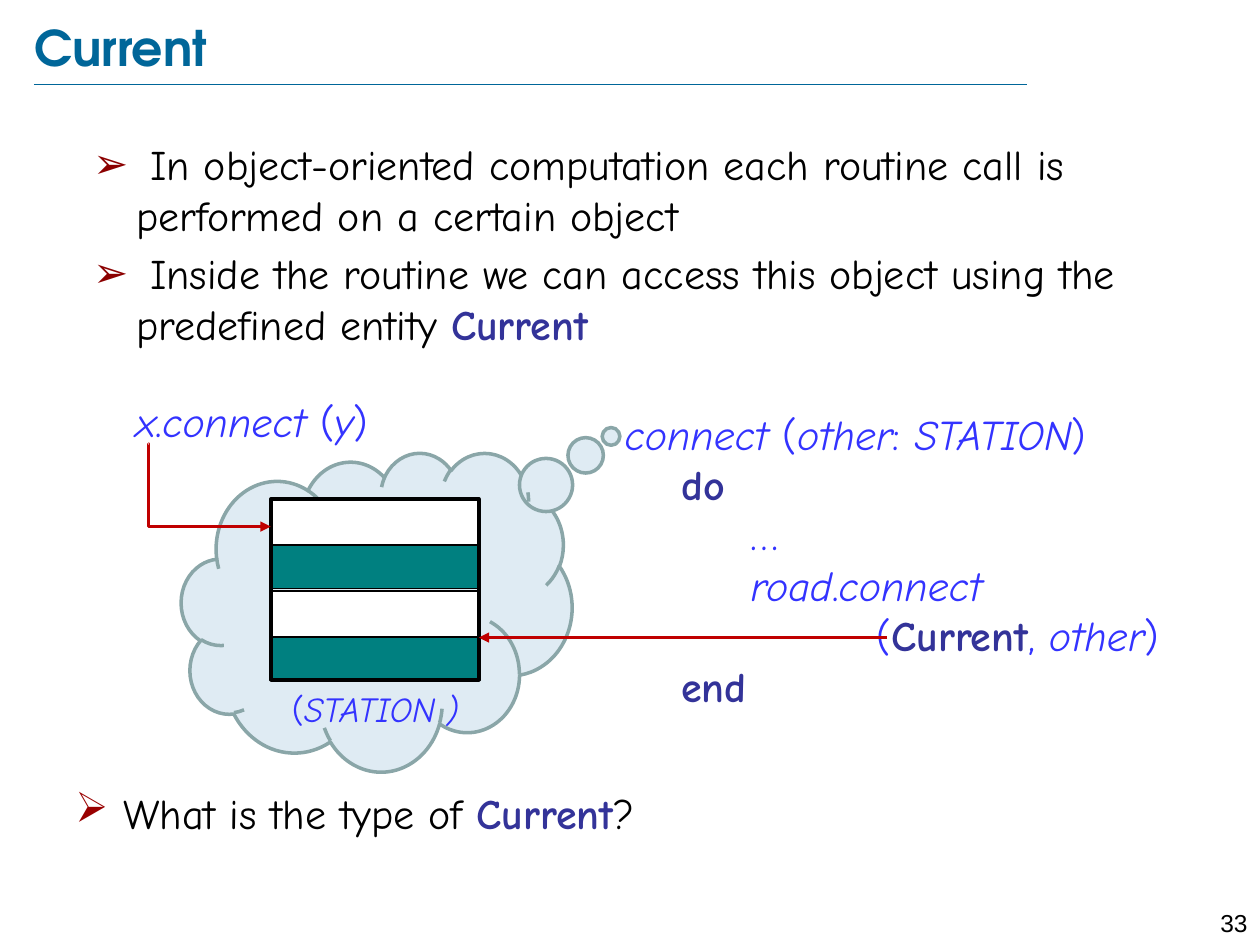
from dataclasses import dataclass
from typing import Optional

from lxml import etree
from pptx import Presentation
from pptx.dml.color import RGBColor
from pptx.enum.shapes import MSO_CONNECTOR, MSO_SHAPE
from pptx.enum.text import MSO_ANCHOR, MSO_AUTO_SIZE, PP_ALIGN
from pptx.oxml.ns import qn
from pptx.util import Pt

PX = 9144  # 100 px to the inch
RECT, CLOUD = MSO_SHAPE.RECTANGLE, MSO_SHAPE.CLOUD_CALLOUT
STRAIGHT, ELBOW = MSO_CONNECTOR.STRAIGHT, MSO_CONNECTOR.ELBOW
LEFT, CENTER, RIGHT = PP_ALIGN.LEFT, PP_ALIGN.CENTER, PP_ALIGN.RIGHT
TOP, MIDDLE = MSO_ANCHOR.TOP, MSO_ANCHOR.MIDDLE
COLORS = {
    "black": "000000", "white": "FFFFFF", "teal": "008080", "title": "006699",
    "code": "3333FF", "key": "333399", "red": "C00000", "mark": "8B0000",
    "mark2": "990000", "cloud": "DFEBF3", "edge": "8AA6A8",
}


@dataclass
class Run:
    text: str
    color: str = "black"
    bold: bool = False
    italic: bool = False


@dataclass
class Para:
    runs: list[Run]
    left: int = 0
    hang: int = 0
    mark: Optional[str] = None
    before: float = 0


@dataclass
class Block:
    kind: int
    box: tuple[int, int, int, int]
    fill: Optional[str]
    edge: str
    width: float


def rgb(name: str) -> RGBColor:
    return RGBColor.from_string(COLORS[name])


def place(shape, box: tuple[int, int, int, int]):
    shape.left, shape.top, shape.width, shape.height = (n * PX for n in box)
    return shape


def code(text: str) -> Run:
    return Run(text, "code")


def name(text: str) -> Run:
    return Run(text, "code", italic=True)


def key(text: str) -> Run:
    return Run(text, "key", bold=True)


def add_mark(par, color: str) -> None:
    props = par._p.get_or_add_pPr()
    tint = etree.SubElement(props, qn("a:buClr"))
    etree.SubElement(tint, qn("a:srgbClr")).set("val", COLORS[color])
    etree.SubElement(props, qn("a:buChar")).set("char", "➢")


def write(shape, paras: list[Para], *, size: int = 24, font: str = "Comic Neue",
          align=LEFT, anchor=TOP, inset: Optional[int] = None) -> None:
    frame = shape.text_frame
    frame.word_wrap = True
    frame.auto_size = MSO_AUTO_SIZE.NONE
    frame.vertical_anchor = anchor
    if inset is not None:
        frame.margin_left = frame.margin_right = inset * PX
        frame.margin_top = frame.margin_bottom = inset * PX
    for i, item in enumerate(paras):
        par = frame.add_paragraph() if i else frame.paragraphs[0]
        par.alignment = align
        par.space_before = Pt(item.before)
        props = par._p.get_or_add_pPr()
        props.set("marL", str(item.left * PX))
        props.set("indent", str(-item.hang * PX))
        if item.mark:
            add_mark(par, item.mark)
        for part in item.runs:
            run = par.add_run()
            run.text = part.text
            run.font.name, run.font.size = font, Pt(size)
            run.font.bold, run.font.italic = part.bold, part.italic
            run.font.color.rgb = rgb(part.color)


def add_text(slide, box: tuple[int, int, int, int], paras: list[Para], **fmt) -> None:
    write(slide.shapes.add_textbox(*(n * PX for n in box)), paras, **fmt)


def add_block(slide, block: Block):
    shape = slide.shapes.add_shape(block.kind, *(n * PX for n in block.box))
    shape.shadow.inherit = False
    if block.fill:
        shape.fill.solid()
        shape.fill.fore_color.rgb = rgb(block.fill)
    else:
        shape.fill.background()
    shape.line.color.rgb = rgb(block.edge)
    shape.line.width = Pt(block.width)
    return shape


def add_line(slide, kind, start: tuple[int, int], end: tuple[int, int],
             color: str, width: float, tip: Optional[str] = None):
    """Draw a connector; tip is headEnd (at start) or tailEnd (at end)."""
    line = slide.shapes.add_connector(kind, *(n * PX for n in start + end))
    line.line.color.rgb = rgb(color)
    line.line.width = Pt(width)
    if tip:
        stroke = line.line._get_or_add_ln()
        etree.SubElement(stroke, qn("a:" + tip)).set("type", "triangle")
    etree.SubElement(line._element.spPr, qn("a:effectLst"))
    return line


def bend(line, share: int) -> None:
    """Move the elbow to a share (of 100000) of the way along."""
    guides = line._element.spPr.find(qn("a:prstGeom")).get_or_add_avLst()
    guide = etree.SubElement(guides, qn("a:gd"))
    guide.set("name", "adj1")
    guide.set("fmla", f"val {share}")


def main() -> None:
    deck = Presentation()
    deck.slide_width, deck.slide_height = 1000 * PX, 750 * PX
    slide = deck.slides.add_slide(deck.slide_layouts[1])
    title, body = slide.placeholders

    add_line(slide, STRAIGHT, (27, 67), (815, 67), "title", 0.25)
    write(place(title, (27, 13, 869, 48)), [Para([Run("Current", "title", bold=True)])],
          size=28, font="TeX Gyre Adventor", anchor=MIDDLE, inset=0)
    write(place(body, (51, 105, 921, 174)), [
        Para([Run(" In object-oriented computation each routine call is "
                  "performed on a certain object")], 47, 34, "mark"),
        Para([Run(" Inside the routine we can access this object using the "
                  "predefined entity "), key("Current")], 47, 34, "mark", 4.8),
    ])
    add_text(slide, (945, 716, 55, 24), [Para([Run("33")])],
             size=14, font="Arial", align=RIGHT)

    cloud = add_block(slide, Block(CLOUD, (144, 359, 310, 253), "cloud", "edge", 2))
    cloud.adjustments[0], cloud.adjustments[1] = 0.6, -0.55
    fields = [(396, 36, "white"), (433, 34, "teal"), (469, 36, "white"), (506, 33, "teal")]
    for top, high, fill in fields:
        add_block(slide, Block(RECT, (215, top, 165, high), fill, "black", 0.75))
    add_block(slide, Block(RECT, (215, 396, 165, 144), None, "black", 2))
    add_text(slide, (204, 541, 188, 44), [Para([code("("), name("STATION )")])],
             size=20, align=CENTER)

    call = [name("x"), code("."), name("connect "), code("("), name("y"), code(")")]
    add_text(slide, (98, 309, 223, 50), [Para(call)])
    add_text(slide, (486, 319, 480, 253), [
        Para([name("connect"), code(" ("), name("other"), code(": "),
              name("STATION"), code(")")]),
        Para([key("do")], 45),
        Para([code("…")], 100),
        Para([name("road"), code("."), name("connect")], 100),
        Para([code("("), key("Current"), code(", "), name("other"), code(")")], 200),
        Para([key("end")], 45),
    ])
    bend(add_line(slide, ELBOW, (215, 418), (118, 352), "red", 1.5, "headEnd"), 99900)
    add_line(slide, STRAIGHT, (704, 506), (380, 506), "red", 1.5, "tailEnd")

    add_text(slide, (50, 620, 921, 57), [
        Para([Run("What is the type of "), key("Current"), Run("?")], 38, 38, "mark2"),
    ])
    deck.save("out.pptx")


if __name__ == "__main__":
    main()
